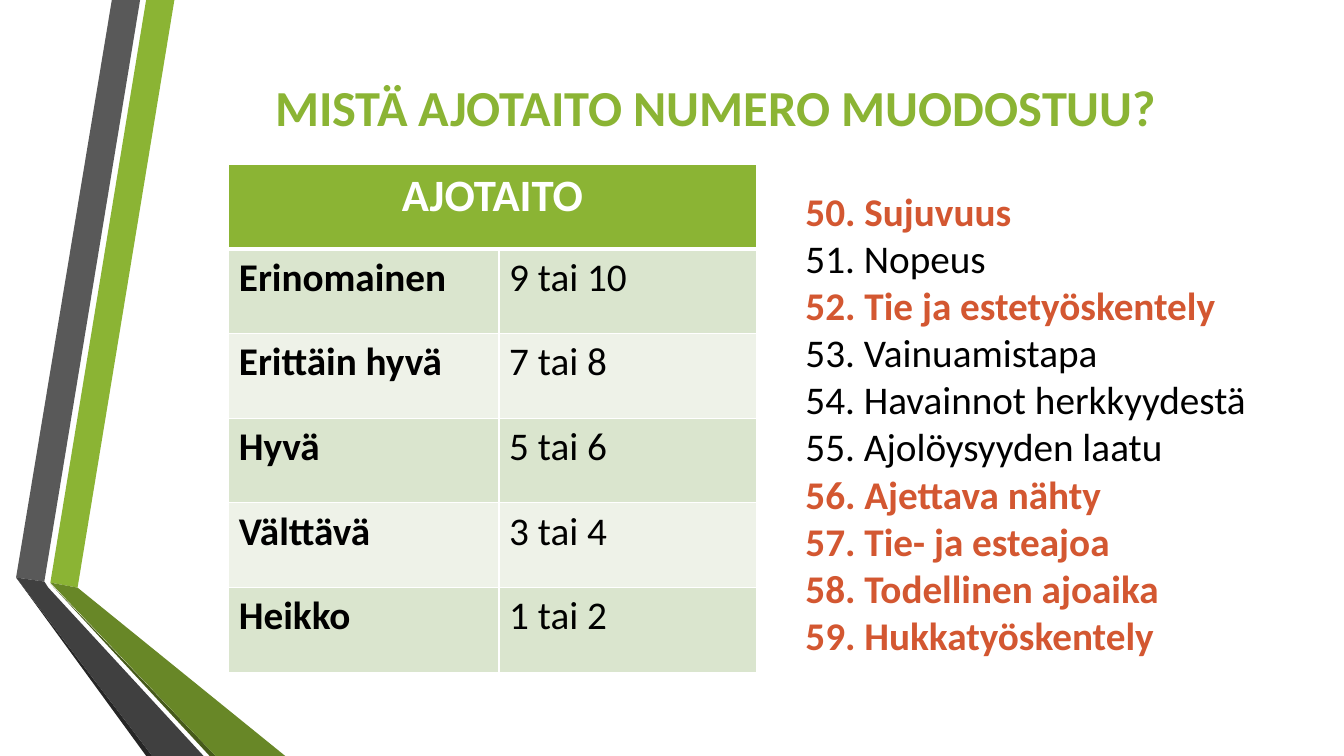
from lxml.etree import SubElement
from pptx import Presentation
from pptx.dml.color import RGBColor
from pptx.enum.text import MSO_ANCHOR, PP_ALIGN
from pptx.oxml.ns import qn
from pptx.util import Inches, Pt

GREEN = RGBColor(0x8B, 0xB4, 0x34)
MID_GREEN = RGBColor(0x68, 0x87, 0x27)
DARK_GREEN = RGBColor(0x46, 0x5A, 0x1A)
PALE_GREEN = RGBColor(0xDA, 0xE5, 0xCE)
PALEST_GREEN = RGBColor(0xEE, 0xF2, 0xE8)
GREY = RGBColor(0x59, 0x59, 0x59)
DARK_GREY = RGBColor(0x40, 0x40, 0x40)
DARKEST_GREY = RGBColor(0x26, 0x26, 0x26)
ORANGE = RGBColor(0xD3, 0x57, 0x31)
BLACK = RGBColor(0, 0, 0)
WHITE = RGBColor(0xFF, 0xFF, 0xFF)

RIBBONS = [
    (GREEN, [(0.5, 5.78), (0.77, 5.83), (1.73, 0), (1.45, 0)]),
    (GREY, [(1.39, 0), (1.11, 0), (0.16, 5.73), (0.44, 5.77)]),
    (DARKEST_GREY, [(0.16, 5.73), (1.45, 7.5), (1.51, 7.5)]),
    (DARK_GREEN, [(0.5, 5.79), (2.08, 7.5), (2.14, 7.5)]),
    (MID_GREEN, [(0.5, 5.78), (2.14, 7.5), (2.83, 7.5), (0.77, 5.83)]),
    (DARK_GREY, [(2.02, 7.5), (0.48, 5.83), (0.44, 5.77), (0.16, 5.73), (1.51, 7.5)]),
]

GRADES = [
    ("Erinomainen", "9 tai 10"),
    ("Erittäin hyvä", "7 tai 8"),
    ("Hyvä", "5 tai 6"),
    ("Välttävä", "3 tai 4"),
    ("Heikko", "1 tai 2"),
]

# Each criterion with whether it is emphasised
CRITERIA = [
    ("50. Sujuvuus", True),
    ("51. Nopeus", False),
    ("52. Tie ja estetyöskentely", True),
    ("53. Vainuamistapa", False),
    ("54. Havainnot herkkyydestä", False),
    ("55. Ajolöysyyden laatu", False),
    ("56. Ajettava nähty", True),
    ("57. Tie- ja esteajoa", True),
    ("58. Todellinen ajoaika", True),
    ("59. Hukkatyöskentely", True),
]


class SlideBuilder:
    font_name = "Calibri"
    body_size = 28

    def __init__(self, presentation):
        self.slide = presentation.slides.add_slide(presentation.slide_layouts[5])

    def set_text(self, paragraph, text, size, color, bold, align=PP_ALIGN.LEFT):
        paragraph.text = text
        paragraph.alignment = align
        for run in paragraph.runs:
            run.font.name = self.font_name
            run.font.size = Pt(size)
            run.font.bold = bold
            run.font.color.rgb = color

    def title(self, text, left, top, width, height):
        heading = self.slide.shapes.title
        heading.left, heading.top = Inches(left), Inches(top)
        heading.width, heading.height = Inches(width), Inches(height)
        heading.text_frame.vertical_anchor = MSO_ANCHOR.MIDDLE
        self.set_text(heading.text_frame.paragraphs[0], text, 36, GREEN, True, PP_ALIGN.CENTER)

    def ribbon(self, color, points):
        outline = self.slide.shapes.build_freeform(
            Inches(points[0][0]), Inches(points[0][1]))
        outline.add_line_segments([(Inches(x), Inches(y)) for x, y in points[1:]])
        ribbon = outline.convert_to_shape()
        ribbon.shadow.inherit = False
        ribbon.fill.solid()
        ribbon.fill.fore_color.rgb = color
        ribbon.line.fill.background()

    def style_cell(self, cell, fill, top_width, bottom_width):
        """Fill the cell and give it white borders, widths in points."""
        properties = cell._tc.get_or_add_tcPr()
        widths = {"a:lnL": 1, "a:lnR": 1, "a:lnT": top_width, "a:lnB": bottom_width}
        for side, width in widths.items():
            border = SubElement(properties, qn(side), w=str(Pt(width)))
            solid = SubElement(border, qn("a:solidFill"))
            SubElement(solid, qn("a:srgbClr"), val=str(WHITE))
        cell.fill.solid()
        cell.fill.fore_color.rgb = fill

    def grade_table(self, heading, grades, left, top, column_widths, row_height):
        row_count = len(grades) + 1
        table = self.slide.shapes.add_table(
            row_count, len(column_widths), Inches(left), Inches(top),
            Inches(sum(column_widths)), Inches(row_height * row_count)).table
        for column, width in zip(table.columns, column_widths):
            column.width = Inches(width)
        for row_index, row in enumerate(table.rows):
            row.height = Inches(row_height)
            band = PALE_GREEN if row_index % 2 else PALEST_GREEN
            for cell in row.cells:
                self.style_cell(cell, band if row_index else GREEN,
                                3 if row_index == 1 else 1, 1 if row_index else 3)
        header = table.cell(0, 0)
        header.merge(table.cell(0, len(column_widths) - 1))
        self.set_text(header.text_frame.paragraphs[0], heading, 32, WHITE, True, PP_ALIGN.CENTER)
        for row_index, grade in enumerate(grades, start=1):
            for column_index, text in enumerate(grade):
                paragraph = table.cell(row_index, column_index).text_frame.paragraphs[0]
                self.set_text(paragraph, text, self.body_size, BLACK, column_index == 0)

    def criteria_list(self, criteria, left, top, width, height):
        frame = self.slide.shapes.add_textbox(
            Inches(left), Inches(top), Inches(width), Inches(height)).text_frame
        frame.word_wrap = True
        frame.text = "\n".join(text for text, _ in criteria)
        for paragraph, (text, emphasised) in zip(frame.paragraphs, criteria):
            self.set_text(paragraph, text, self.body_size,
                          ORANGE if emphasised else BLACK, emphasised)


def main():
    presentation = Presentation()
    presentation.slide_width = Inches(13.33)
    presentation.slide_height = Inches(7.5)
    builder = SlideBuilder(presentation)
    for color, points in RIBBONS:
        builder.ribbon(color, points)
    builder.title("MISTÄ AJOTAITO NUMERO MUODOSTUU?", 1.62, 0.75, 10.96, 0.6)
    builder.grade_table("AJOTAITO", GRADES, 2.27, 1.63, (2.68, 2.55), 0.84)
    builder.criteria_list(CRITERIA, 7.89, 1.81, 4.95, 5.12)
    presentation.save("out.pptx")


if __name__ == "__main__":
    main()
